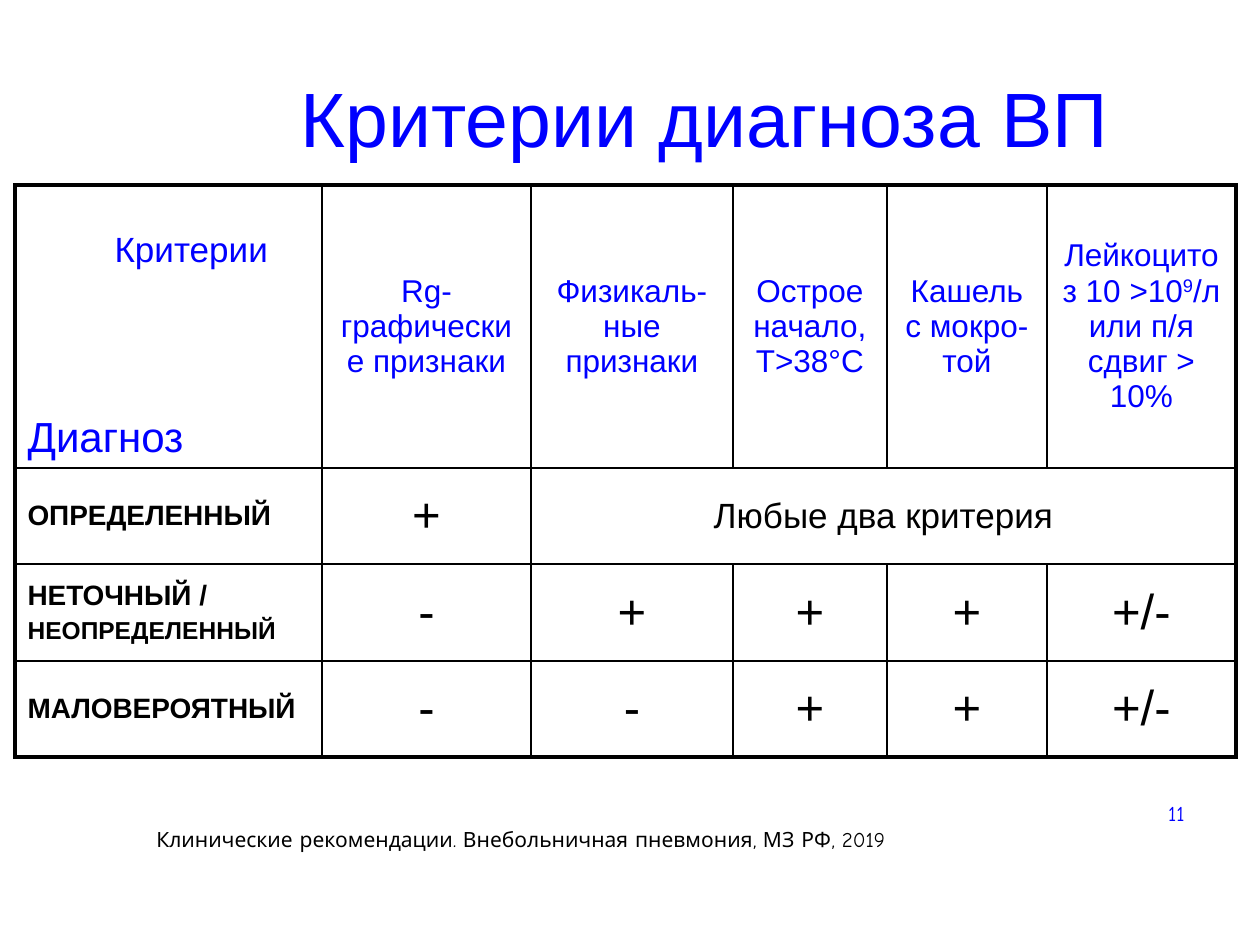
from dataclasses import dataclass

import pptx
import pptx.dml.color
import pptx.enum.text
import pptx.oxml.ns
import pptx.util
from lxml import etree

SCALE = 914400 / 126  # EMU in one px
HUES = {"blue": "0000FF", "black": "000000", "white": "FFFFFF"}
ALIGN = pptx.enum.text.PP_ALIGN
ANCHOR = pptx.enum.text.MSO_ANCHOR
COLS = [307, 209, 202, 154, 160, 189]
ROWS = [283, 96, 97, 96]
THIN, THICK = 1, 2.25


@dataclass
class Label:
    text: str
    box: tuple[int, int, int, int]
    size: int
    hue: str
    font: str
    align: ALIGN
    anchor: ANCHOR = ANCHOR.MIDDLE


@dataclass
class Entry:
    row: int
    col: int
    text: str
    size: int
    hue: str = "black"
    bold: bool = False
    align: ALIGN = ALIGN.CENTER
    span: int = 1


def px(num: int) -> int:
    return round(num * SCALE)


def tint(name: str) -> pptx.dml.color.RGBColor:
    return pptx.dml.color.RGBColor.from_string(HUES[name])


def write(frame, text: str, *, size: int, hue: str, font: str = "Arial",
          bold: bool = False, align=ALIGN.LEFT, gap: float = 0,
          indent: int = 0, more: bool = False) -> None:
    """Fill one paragraph; a part between ^ marks is raised."""
    para = frame.add_paragraph() if more else frame.paragraphs[0]
    para.alignment = align
    para.space_before = pptx.util.Pt(gap)
    if indent:
        para._p.get_or_add_pPr().set("marL", str(px(indent)))
    for num, part in enumerate(text.split("^")):
        run = para.add_run()
        run.text = part
        run.font.size = pptx.util.Pt(size)
        run.font.name = font
        run.font.bold = bold
        run.font.color.rgb = tint(hue)
        if num % 2:
            run._r.get_or_add_rPr().set("baseline", "30000")


def place(slide, label: Label) -> None:
    frame = slide.shapes.add_textbox(*map(px, label.box)).text_frame
    frame.word_wrap = True
    frame.vertical_anchor = label.anchor
    write(frame, label.text, size=label.size, hue=label.hue,
          font=label.font, align=label.align)


def edge(cell, sides: dict[str, float]) -> None:
    props = cell._tc.get_or_add_tcPr()
    for num, (side, width) in enumerate(sides.items()):
        line = etree.Element(pptx.oxml.ns.qn(f"a:ln{side}"),
                             w=str(pptx.util.Pt(width)))
        fill = etree.SubElement(line, pptx.oxml.ns.qn("a:solidFill"))
        etree.SubElement(fill, pptx.oxml.ns.qn("a:srgbClr"), val=HUES["black"])
        props.insert(num, line)


def dress(cell, row: int, col: int, span: int = 1) -> None:
    """Give a cell its fill and borders, thick on the outer frame."""
    cell.fill.solid()
    cell.fill.fore_color.rgb = tint("white")
    outer = {"L": col == 0, "R": col + span == len(COLS),
             "T": row == 0, "B": row == len(ROWS) - 1}
    edge(cell, {side: THICK if out else THIN for side, out in outer.items()})


def enter(table, item: Entry) -> None:
    cell = table.cell(item.row, item.col)
    if item.span > 1:
        cell.merge(table.cell(item.row, item.col + item.span - 1))
    cell.vertical_anchor = ANCHOR.MIDDLE
    dress(cell, item.row, item.col, item.span)
    write(cell.text_frame, item.text, size=item.size, hue=item.hue,
          bold=item.bold, align=item.align)


def main() -> None:
    deck = pptx.Presentation()
    deck.slide_width, deck.slide_height = px(1260), px(945)
    slide = deck.slides.add_slide(deck.slide_layouts[6])

    # Title, page number and source
    for label in (
        Label("11", (903, 788, 294, 50), 12, "blue", "Comic Neue", ALIGN.RIGHT),
        Label("Критерии диагноза ВП", (134, 38, 1142, 158), 44, "blue",
              "Arial", ALIGN.CENTER),
        Label("Клинические рекомендации. Внебольничная пневмония, МЗ РФ, 2019",
              (144, 820, 1081, 38), 12, "black", "Comic Neue", ALIGN.LEFT,
              ANCHOR.TOP),
    ):
        place(slide, label)

    # Table grid
    table = slide.shapes.add_table(len(ROWS), len(COLS), px(15), px(185),
                                   px(sum(COLS)), px(sum(ROWS))).table
    table.first_row = table.horz_banding = False
    for col, width in zip(table.columns, COLS):
        col.width = px(width)
    for row, height in zip(table.rows, ROWS):
        row.height = px(height)

    # Corner cell
    cell = table.cell(0, 0)
    cell.vertical_anchor = ANCHOR.BOTTOM
    dress(cell, 0, 0)
    write(cell.text_frame, "Критерии", size=20, hue="blue", indent=87)
    write(cell.text_frame, "Диагноз", size=24, hue="blue", gap=83, more=True)

    # Criteria heads
    heads = ["Rg-графические признаки", "Физикаль-ные признаки",
             "Острое начало, Т>38°С", "Кашель с мокро-той",
             "Лейкоцитоз 10 >10^9^/л или п/я сдвиг > 10%"]
    for col, text in enumerate(heads, 1):
        enter(table, Entry(0, col, text, 18, "blue"))

    # Diagnosis rows
    names = ["ОПРЕДЕЛЕННЫЙ", "НЕТОЧНЫЙ /", "МАЛОВЕРОЯТНЫЙ"]
    for row, text in enumerate(names, 1):
        enter(table, Entry(row, 0, text, 16, bold=True, align=ALIGN.LEFT))
    write(table.cell(2, 0).text_frame, "НЕОПРЕДЕЛЕННЫЙ", size=14, hue="black",
          bold=True, gap=3, more=True)

    # Signs
    signs = [["+"], ["-", "+", "+", "+", "+/-"], ["-", "-", "+", "+", "+/-"]]
    for row, marks in enumerate(signs, 1):
        for col, mark in enumerate(marks, 1):
            enter(table, Entry(row, col, mark, 28))
    enter(table, Entry(1, 2, "Любые два критерия", 20, span=4))

    deck.save("out.pptx")


if __name__ == "__main__":
    main()
